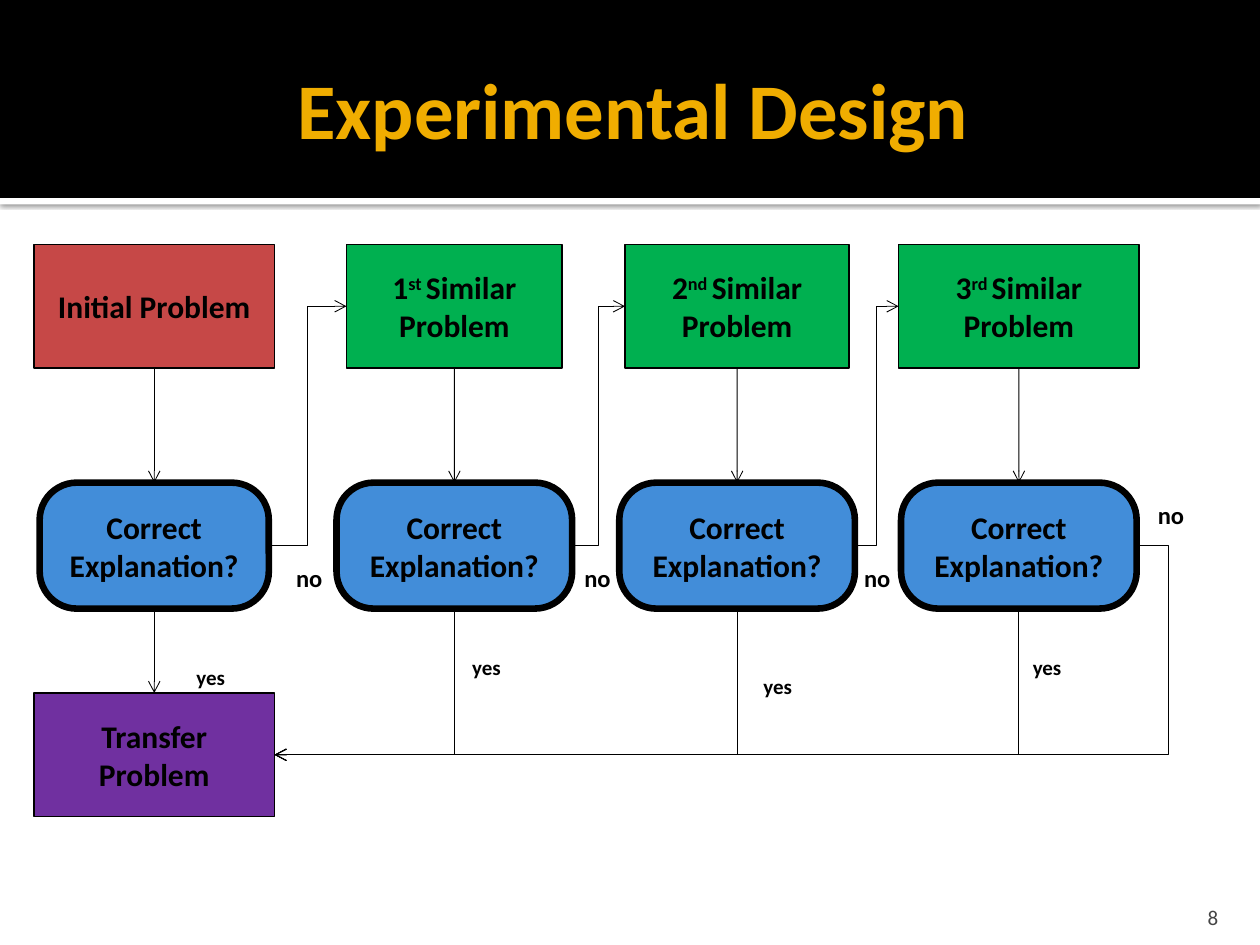
import pptx
import pptx.dml.color
import pptx.enum.shapes
import pptx.enum.text
import pptx.oxml.ns
import pptx.util
from lxml import etree

Cm, Pt = pptx.util.Cm, pptx.util.Pt
RGB = pptx.dml.color.RGBColor
Kind = pptx.enum.shapes.MSO_SHAPE
Link = pptx.enum.shapes.MSO_CONNECTOR
Align = pptx.enum.text.PP_ALIGN
Anchor = pptx.enum.text.MSO_ANCHOR
qn = pptx.oxml.ns.qn

BLACK = RGB(0x00, 0x00, 0x00)
WHITE = RGB(0xFF, 0xFF, 0xFF)
GOLD = RGB(0xF0, 0xAD, 0x00)
GREEN = RGB(0x00, 0xB0, 0x50)
RED = RGB(0xC6, 0x48, 0x47)
PURPLE = RGB(0x70, 0x30, 0xA0)
BLUE = RGB(0x00, 0x66, 0xCC)
GREY = RGB(0x45, 0x45, 0x45)

# Rows of the flow chart, in cm
BOX_TOP, BOX_H = 4.93, 2.49
ASK_TOP, ASK_H = 9.73, 2.54
END_TOP = 13.97
BOX_MID = BOX_TOP + BOX_H / 2
ASK_MID = ASK_TOP + ASK_H / 2
ASK_END = ASK_TOP + ASK_H
END_MID = END_TOP + BOX_H / 2

# Centre, box width, question width, fill, text as (words, raised)
STEPS = [
    (3.11, 4.85, 4.62, RED, [("Initial Problem", False)]),
    (9.16, 4.35, 4.75, GREEN, [("1", False), ("st ", True), ("Similar Problem", False)]),
    (14.86, 4.52, 4.75, GREEN, [("2", False), ("nd ", True), ("Similar Problem", False)]),
    (20.54, 4.85, 4.75, GREEN, [("3", False), ("rd ", True), ("Similar Problem", False)]),
]
YES = [(3.71, 13.28), (9.27, 13.08), (15.14, 13.46), (20.57, 13.08)]
NO = [(5.72, 11.23), (11.53, 11.23), (17.17, 11.23), (23.09, 9.96)]


def write(frame, parts, size, color=BLACK, bold=True, align=Align.CENTER):
    frame.word_wrap = True
    para = frame.paragraphs[0]
    para.alignment = align
    for words, raised in parts:
        run = para.add_run()
        run.text = words
        font = run.font
        font.name, font.size, font.bold = "Calibri", Pt(size), bold
        font.color.rgb = color
        if raised:
            font._element.set("baseline", "30000")


def add_box(slide, kind, x, y, w, h, fill, line=None):
    box = slide.shapes.add_shape(kind, Cm(x), Cm(y), Cm(w), Cm(h))
    box.shadow.inherit = False
    box.fill.solid()
    box.fill.fore_color.rgb = fill
    if line:
        box.line.color.rgb = BLACK
        box.line.width = Pt(line)
    else:
        box.line.fill.background()
    box.text_frame.vertical_anchor = Anchor.MIDDLE
    return box


def add_ask(slide, mid, w):
    ask = add_box(slide, Kind.ROUNDED_RECTANGLE, mid - w / 2, ASK_TOP,
                  w, ASK_H, BLUE, 3.78)
    ask.adjustments[0] = 0.295
    tint = ask._element.spPr.find(qn("a:solidFill"))[0]
    etree.SubElement(tint, qn("a:alpha"), val="74000")
    write(ask.text_frame, [("Correct Explanation?", False)], 18)
    return ask


def add_text(slide, x, y, w, h, words, size, **style):
    box = slide.shapes.add_textbox(Cm(x), Cm(y), Cm(w), Cm(h))
    write(box.text_frame, [(words, False)], size, **style)
    return box.text_frame


def add_link(slide, kind, x1, y1, x2, y2):
    link = slide.shapes.add_connector(kind, Cm(x1), Cm(y1), Cm(x2), Cm(y2))
    link.line.color.rgb = BLACK
    link.line.width = Pt(0.5)
    etree.SubElement(link.line._get_or_add_ln(), qn("a:tailEnd"), type="arrow")
    etree.SubElement(link._element.spPr, qn("a:effectLst"))
    return link


def join(slide, top, low):
    link = add_link(slide, Link.STRAIGHT, 0, 0, 1, 1)
    link.begin_connect(top, 2)
    link.end_connect(low, 0)


def add_turn(slide, x1, y1, x2, y2):
    """One corner: down from the start, then left; a quarter-turned elbow."""
    mx, my = (x1 + x2) / 2, (y1 + y2) / 2
    dx, dy = (x1 - x2) / 2, (y2 - y1) / 2
    link = add_link(slide, Link.ELBOW, mx - dy, my - dx, mx + dy, my + dx)
    props = link._element.spPr
    props.find(qn("a:xfrm")).set("rot", "5400000")
    props.find(qn("a:prstGeom")).set("prst", "bentConnector2")


def add_header(slide):
    strip = add_box(slide, Kind.RECTANGLE, 0, 3.99, 25.4, 0.13, WHITE)
    glow = etree.SubElement(
        strip._element.spPr.find(qn("a:effectLst")), qn("a:outerShdw"),
        blurRad=str(Pt(2.5)), dist=str(Pt(0.8)), dir="5400000")
    tint = etree.SubElement(glow, qn("a:srgbClr"), val=str(BLACK))
    etree.SubElement(tint, qn("a:alpha"), val="60000")
    add_box(slide, Kind.RECTANGLE, 0, 0, 25.4, 3.99, BLACK)
    title = add_text(slide, 1.27, 0.43, 22.86, 3.48, "Experimental Design", 45, color=GOLD)
    title.vertical_anchor = Anchor.MIDDLE
    title.margin_right = Cm(0.13)


def add_flow(slide):
    # Boxes and questions
    boxes, asks = [], []
    for mid, w, ask_w, fill, parts in STEPS:
        box = add_box(slide, Kind.RECTANGLE, mid - w / 2, BOX_TOP, w, BOX_H, fill, 1)
        write(box.text_frame, parts, 18)
        boxes.append(box)
        asks.append(add_ask(slide, mid, ask_w))
    first, wide = STEPS[0][:2]
    goal = add_box(slide, Kind.RECTANGLE, first - wide / 2, END_TOP, wide, BOX_H, PURPLE, 1)
    write(goal.text_frame, [("Transfer Problem", False)], 18)

    # Straight arrows
    for box, ask in zip(boxes, asks):
        join(slide, box, ask)
    join(slide, asks[0], goal)

    # "Yes" routes to the transfer problem
    side = first + wide / 2
    for step in STEPS[1:]:
        add_turn(slide, step[0], ASK_END, side, END_MID)

    # "No" routes to the next problem
    for now, then in zip(STEPS, STEPS[1:]):
        add_link(slide, Link.ELBOW, now[0] + now[2] / 2, ASK_MID,
                 then[0] - then[1] / 2, BOX_MID)
    last = STEPS[-1]
    link = add_link(slide, Link.ELBOW, last[0] + last[2] / 2, ASK_MID, side, END_MID)
    guide = link._element.spPr.find(qn("a:prstGeom")).find(qn("a:avLst"))
    etree.SubElement(guide, qn("a:gd"), name="adj1", fmla="val -3700")

    # Answers
    for words, size, h, spots in (("yes", 12, 0.76, YES), ("no", 14, 0.86, NO)):
        for x, y in spots:
            add_text(slide, x, y, 1.22, h, words, size, align=Align.LEFT)


def main():
    deck = pptx.Presentation()
    deck.slide_width, deck.slide_height = Cm(25.4), Cm(19.05)
    slide = deck.slides.add_slide(deck.slide_layouts[6])
    add_header(slide)
    add_flow(slide)
    # Page number
    page = add_text(slide, 22.78, 17.98, 2.03, 0.76, "8", 12,
                    color=GREY, bold=False, align=Align.RIGHT)
    page.vertical_anchor = Anchor.BOTTOM
    page.margin_bottom = 0
    deck.save("out.pptx")


if __name__ == "__main__":
    main()
